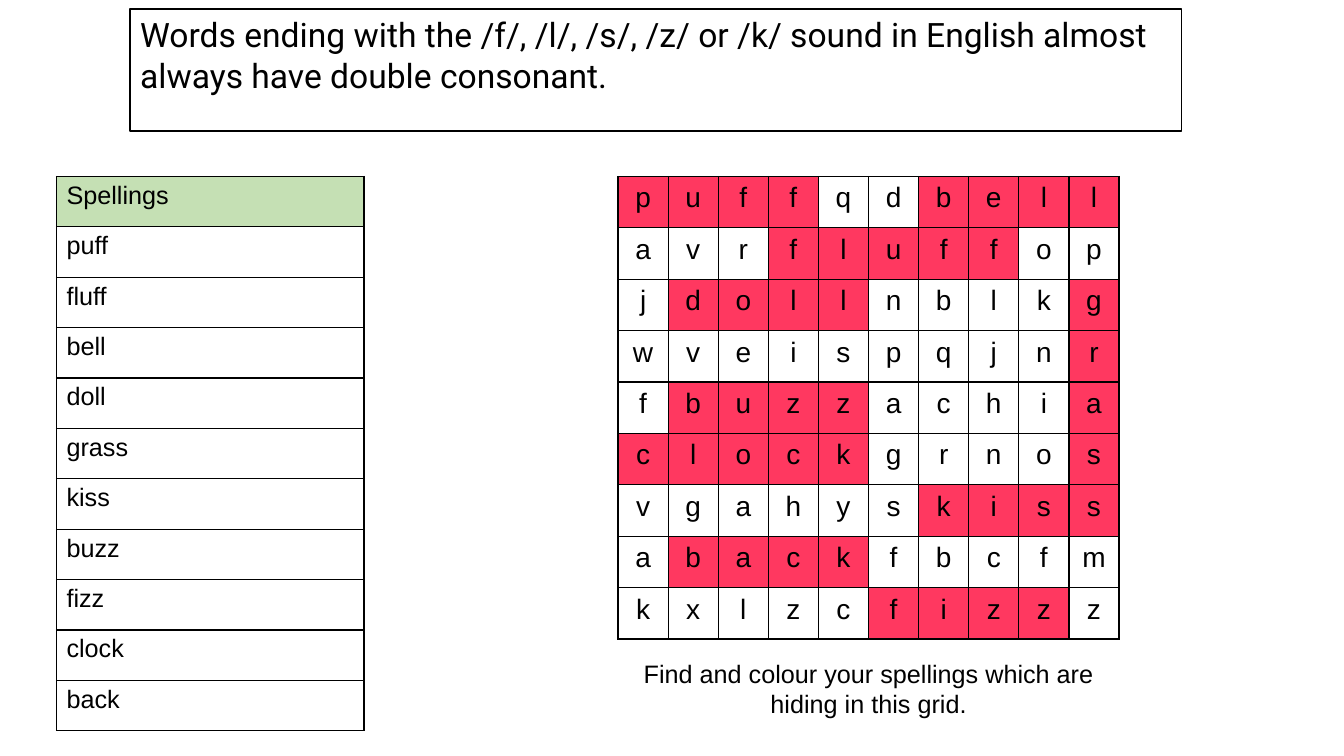
import dataclasses

import lxml.etree
import pptx
import pptx.dml.color
import pptx.enum.text
import pptx.oxml.ns
import pptx.util

Inches = pptx.util.Inches
Pt = pptx.util.Pt
ALIGN = pptx.enum.text.PP_ALIGN
ANCHOR = pptx.enum.text.MSO_ANCHOR
AUTO_SIZE = pptx.enum.text.MSO_AUTO_SIZE


@dataclasses.dataclass(frozen=True)
class Theme:
    ink: str = "000000"
    paper: str = "FFFFFF"
    header: str = "C5E0B4"
    found: str = "FF3860"
    title_font: str = "Roboto"
    body_font: str = "Arial"
    title_size: int = 24
    letter_size: int = 20
    body_size: int = 18
    line_width: int = 1


THEME = Theme()

RULE = ("Words ending with the /f/, /l/, /s/, /z/ or /k/ sound in English "
        "almost always have double consonant.")
TASK = "Find and colour your spellings which are hiding in this grid."
SPELLINGS = ["puff", "fluff", "bell", "doll", "grass",
             "kiss", "buzz", "fizz", "clock", "back"]
# Capitals mark the letters of the hidden words; they are shown in lower case
LETTER_ROWS = ["PUFFqdBELL", "avrFLUFFop", "jDOLLnblkG",
               "wveispqjnR", "fBUZZachiA", "CLOCKgrnoS",
               "vgahysKISS", "aBACKfbcfm", "kxlzcFIZZz"]


def rgb(colour):
    return pptx.dml.color.RGBColor.from_string(colour)


def write(text_frame, text, size, font=THEME.body_font, align=ALIGN.LEFT):
    paragraph = text_frame.paragraphs[0]
    paragraph.alignment = align
    run = paragraph.add_run()
    run.text = text
    run.font.name = font
    run.font.size = Pt(size)
    run.font.color.rgb = rgb(THEME.ink)
    return paragraph


def set_borders(cell):
    properties = cell._tc.get_or_add_tcPr()
    qn = pptx.oxml.ns.qn
    for index, side in enumerate(("lnL", "lnR", "lnT", "lnB")):
        line = lxml.etree.Element(qn(f"a:{side}"), w=str(Pt(THEME.line_width)))
        fill = lxml.etree.SubElement(line, qn("a:solidFill"))
        lxml.etree.SubElement(fill, qn("a:srgbClr"), val=THEME.ink)
        properties.insert(index, line)


def set_fill(cell, colour):
    if colour:
        cell.fill.solid()
        cell.fill.fore_color.rgb = rgb(colour)
    else:
        cell.fill.background()


def add_plain_table(slide, rows, columns, left, top, width, height):
    table = slide.shapes.add_table(rows, columns, Inches(left), Inches(top),
                                   Inches(width), Inches(height)).table
    table.first_row = False
    table.horz_banding = False
    for cell in table.iter_cells():
        set_borders(cell)
    return table


def add_rule_title(slide):
    title = slide.shapes.title
    title.left, title.top = Inches(1.29), Inches(0.09)
    title.width, title.height = Inches(10.43), Inches(1.21)
    title.fill.solid()
    title.fill.fore_color.rgb = rgb(THEME.paper)
    title.line.color.rgb = rgb(THEME.ink)
    title.line.width = Pt(THEME.line_width)
    title.text_frame.auto_size = AUTO_SIZE.NONE
    title.text_frame.vertical_anchor = ANCHOR.TOP
    write(title.text_frame, RULE, THEME.title_size, THEME.title_font)


def add_spelling_list(slide):
    entries = ["Spellings"] + SPELLINGS
    table = add_plain_table(slide, len(entries), 1, 0.56, 1.75, 3.05, 5.5)
    for row, entry in enumerate(entries):
        cell = table.cell(row, 0)
        set_fill(cell, THEME.header if row == 0 else None)
        write(cell.text_frame, entry, THEME.body_size)


def add_letter_grid(slide):
    table = add_plain_table(slide, len(LETTER_ROWS), len(LETTER_ROWS[0]),
                            6.13, 1.75, 4.97, 4.59)
    for row, letters in enumerate(LETTER_ROWS):
        for column, letter in enumerate(letters):
            cell = table.cell(row, column)
            cell.margin_left = cell.margin_right = Inches(0.07)
            cell.margin_top = cell.margin_bottom = 0
            set_fill(cell, THEME.found if letter.isupper() else None)
            paragraph = write(cell.text_frame, letter.lower(),
                              THEME.letter_size, align=ALIGN.CENTER)
            paragraph.line_spacing = 1.2
            paragraph.space_after = Pt(10)


def add_task(slide):
    box = slide.shapes.add_textbox(Inches(6.13), Inches(6.48),
                                   Inches(4.97), Inches(0.71))
    box.text_frame.word_wrap = True
    write(box.text_frame, TASK, THEME.body_size, align=ALIGN.CENTER)


def main():
    presentation = pptx.Presentation()
    presentation.slide_width = Inches(13.33)
    presentation.slide_height = Inches(7.5)
    title_only = presentation.slide_layouts.get_by_name("Title Only")
    slide = presentation.slides.add_slide(title_only)

    add_rule_title(slide)
    add_spelling_list(slide)
    add_letter_grid(slide)
    add_task(slide)
    presentation.save("out.pptx")


if __name__ == "__main__":
    main()
